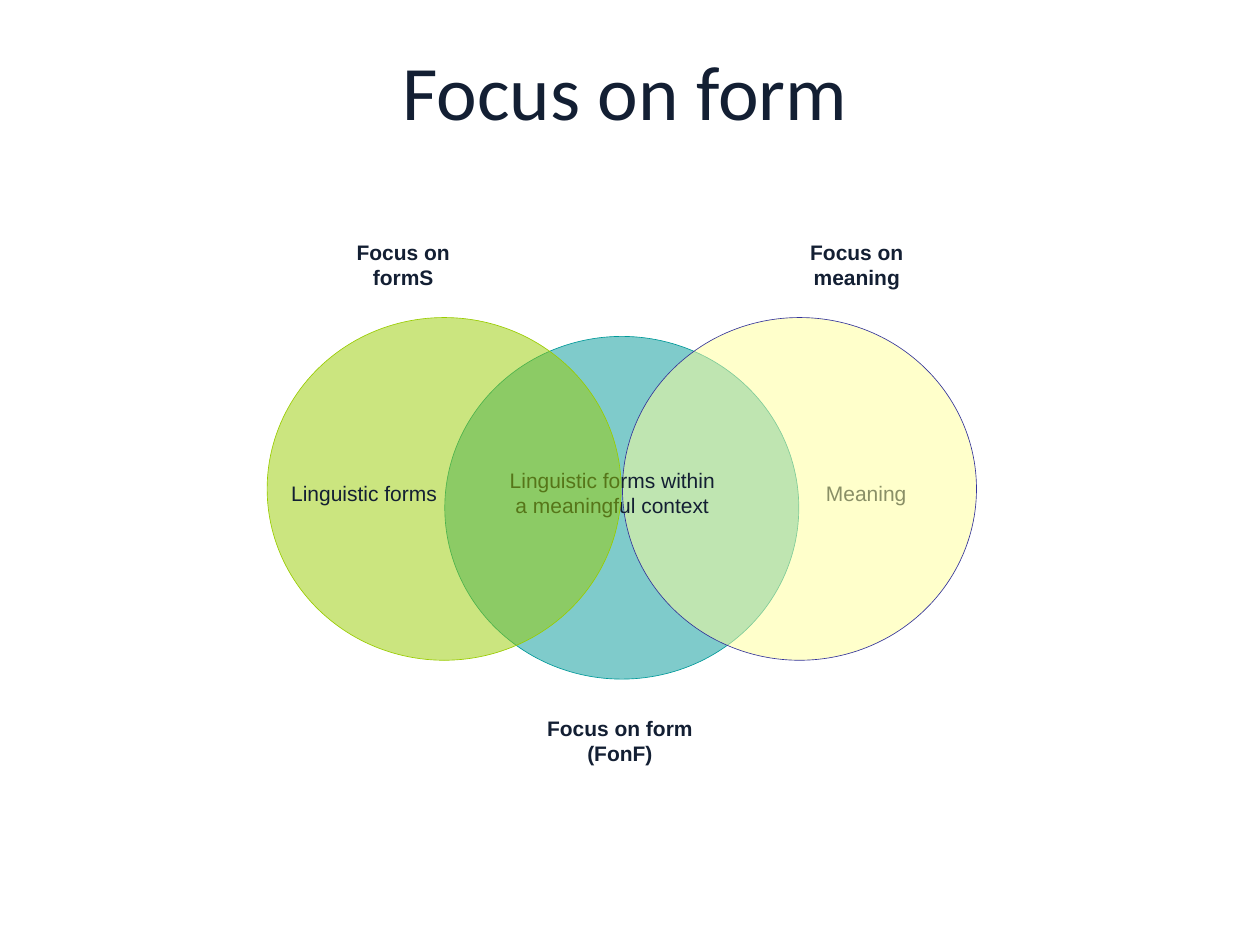
from pptx import Presentation
from pptx.dml.color import RGBColor
from pptx.enum.shapes import MSO_SHAPE
from pptx.enum.text import MSO_ANCHOR, PP_ALIGN
from pptx.oxml.ns import qn
from pptx.util import Inches, Pt
from lxml import etree

INK = "131F33"
CIRCLE_WIDTH, CIRCLE_HEIGHT = 2.81, 2.72
LABEL_WIDTH, LABEL_HEIGHT = 1.22, 0.68


def color(hex_string):
    return RGBColor.from_string(hex_string)


def add_text(shapes, text, left, top, width=LABEL_WIDTH, height=LABEL_HEIGHT, *,
             size=12, font="Arial", bold=False, anchor=MSO_ANCHOR.MIDDLE, margin=0):
    """Add a centred, wrapping text box."""
    box = shapes.add_textbox(Inches(left), Inches(top), Inches(width), Inches(height))
    frame = box.text_frame
    frame.word_wrap = True
    frame.vertical_anchor = anchor
    frame.margin_left = frame.margin_right = Inches(margin)
    frame.margin_top = frame.margin_bottom = Inches(margin)
    paragraph = frame.paragraphs[0]
    paragraph.alignment = PP_ALIGN.CENTER
    run = paragraph.add_run()
    run.text = text
    run.font.size = Pt(size)
    run.font.name = font
    run.font.bold = bold
    run.font.color.rgb = color(INK)


def add_circle(shapes, left, top, fill, line):
    """Add a half-transparent circle of the Venn diagram."""
    circle = shapes.add_shape(MSO_SHAPE.OVAL, Inches(left), Inches(top),
                              Inches(CIRCLE_WIDTH), Inches(CIRCLE_HEIGHT))
    circle.shadow.inherit = False
    circle.fill.solid()
    circle.fill.fore_color.rgb = color(fill)
    fill_color = circle._element.spPr.find(qn("a:solidFill")).find(qn("a:srgbClr"))
    etree.SubElement(fill_color, qn("a:alpha")).set("val", "50000")
    circle.line.color.rgb = color(line)
    circle.line.width = Pt(0.37)


def main():
    presentation = Presentation()
    presentation.slide_width = Inches(10)
    presentation.slide_height = Inches(7.5)
    slide = presentation.slides.add_slide(presentation.slide_layouts[6])

    # Title
    add_text(slide.shapes, "Focus on form", 0.42, 0.3, 9.08, 1.25,
             size=44, font="Calibri", anchor=MSO_ANCHOR.TOP, margin=0.05)

    # Circles and their contents: later circles tint the text beneath them
    diagram = slide.shapes.add_group_shape().shapes
    add_circle(diagram, 3.53, 2.67, "009999", "009999")
    add_text(diagram, "Meaning", 6.5, 3.57, 0.75)
    add_circle(diagram, 4.94, 2.52, "FFFF99", "333399")
    add_text(diagram, "Linguistic forms within a meaningful context", 4, 3.57, 1.72)
    add_circle(diagram, 2.12, 2.52, "99CC00", "99CC00")
    add_text(diagram, "Linguistic forms", 2.28, 3.57)

    # Headings outside the circles
    for heading, left, top in (("Focus on formS", 2.59, 1.76),
                               ("Focus on meaning", 6.19, 1.76),
                               ("Focus on form (FonF)", 4.31, 5.54)):
        add_text(diagram, heading, left, top, bold=True)

    presentation.save("out.pptx")


if __name__ == "__main__":
    main()
